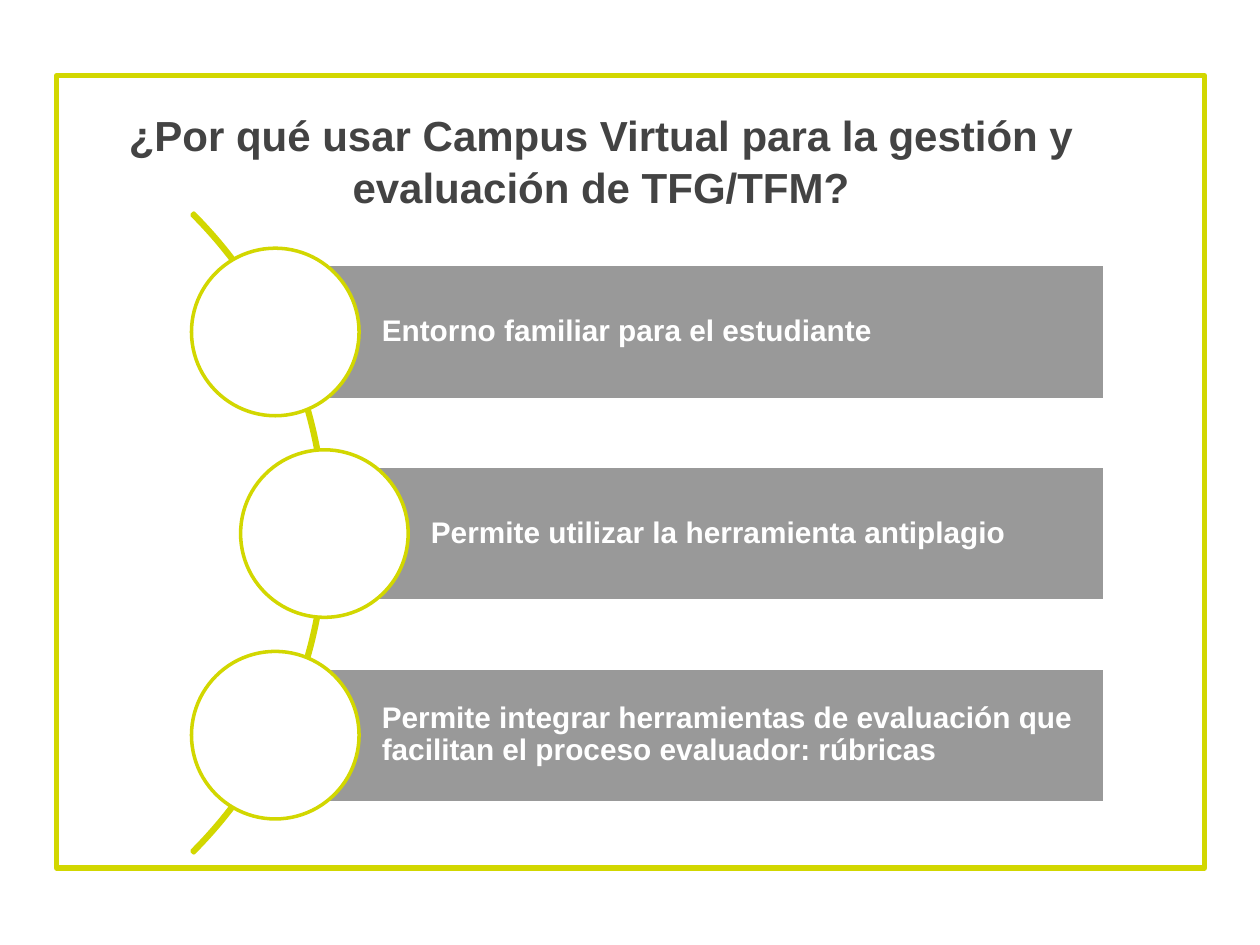
from dataclasses import dataclass

import pptx
import pptx.util
from pptx.dml.color import RGBColor
from pptx.enum.shapes import MSO_SHAPE
from pptx.enum.text import MSO_ANCHOR, MSO_AUTO_SIZE, PP_ALIGN

PX = 9144  # EMU per px, 100 px to the inch


@dataclass(frozen=True)
class Theme:
    font: str = "Arial"
    accent: str = "D2D700"
    bar: str = "999999"
    paper: str = "FFFFFF"
    title: str = "434343"
    title_size: int = 24
    bar_size: int = 17
    frame_line: int = 3
    line: int = 2


THEME = Theme()
TITLE = "¿Por qué usar Campus Virtual para la gestión y evaluación de TFG/TFM?"
REASONS = [
    "Entorno familiar para el estudiante",
    "Permite utilizar la herramienta antiplagio",
    "Permite integrar herramientas de evaluación que "
    "facilitan el proceso evaluador: rúbricas",
]


def emu(*lengths):
    return [pptx.util.Emu(n * PX) for n in lengths]


def add_outlined(slide, kind, box, line, width=THEME.line, fill=None):
    sp = slide.shapes.add_shape(kind, *emu(*box))
    sp.shadow.inherit = False
    if fill:
        sp.fill.solid()
        sp.fill.fore_color.rgb = RGBColor.from_string(fill)
    else:
        sp.fill.background()
    sp.line.color.rgb = RGBColor.from_string(line)
    sp.line.width = pptx.util.Pt(width)
    return sp


def set_text(sp, text, size, color, align, anchor, spacing, insets):
    tf = sp.text_frame
    tf.text = text
    tf.word_wrap = True
    tf.auto_size = MSO_AUTO_SIZE.NONE
    tf.vertical_anchor = anchor
    tf.margin_left, tf.margin_top, tf.margin_right, tf.margin_bottom = emu(*insets)
    p = tf.paragraphs[0]
    p.alignment = align
    p.line_spacing = spacing
    p.font.name = THEME.font
    p.font.size = pptx.util.Pt(size)
    p.font.bold = True
    p.font.color.rgb = RGBColor.from_string(color)


def place_title(slide, box):
    sp = slide.shapes.title
    sp.left, sp.top, sp.width, sp.height = emu(*box)
    set_text(sp, TITLE, THEME.title_size, THEME.title, PP_ALIGN.CENTER,
             MSO_ANCHOR.TOP, 1.04, (10, 10, 10, 10))


def add_reason(slide, box, text):
    """A bar filling the box, with a circle centred on its left edge."""
    left, top, width, height = box
    bar = add_outlined(slide, MSO_SHAPE.RECTANGLE, box, THEME.paper, fill=THEME.bar)
    set_text(bar, text, THEME.bar_size, THEME.paper, PP_ALIGN.LEFT,
             MSO_ANCHOR.MIDDLE, 0.9, (85, 5, 5, 5))
    size = height * 5 // 4
    circle = (left - size // 2, top - (size - height) // 2, size, size)
    add_outlined(slide, MSO_SHAPE.OVAL, circle, THEME.accent, fill=THEME.paper)


def add_curved_list(slide, box, reasons):
    """Bars spaced evenly down the box, strung on an arc bulging to the right."""
    left, top, width, height = box
    diameter, bulge, bar_height, indent = 718, 41, 107, 39
    arc_box = (left + bulge - diameter, top + (height - diameter) // 2,
               diameter, diameter)
    arc = add_outlined(slide, MSO_SHAPE.BLOCK_ARC, arc_box, THEME.accent,
                       fill=THEME.accent)
    for i, value in enumerate((189, 27, 0.003)):  # from 315° to 45°, hairline
        arc.adjustments[i] = value

    step = (height - bar_height) // (len(reasons) - 1)
    for i, text in enumerate(reasons):
        shift = indent * (i % 2)
        add_reason(slide, (left + shift, top + i * step, width - shift, bar_height),
                   text)


def main():
    prs = pptx.Presentation()
    prs.slide_width, prs.slide_height = emu(1000, 750)
    slide = prs.slides.add_slide(prs.slide_layouts[5])
    add_outlined(slide, MSO_SHAPE.RECTANGLE, (45, 60, 911, 629), THEME.accent,
                 THEME.frame_line)
    place_title(slide, (69, 75, 816, 70))
    add_curved_list(slide, (218, 210, 659, 427), REASONS)
    prs.save("out.pptx")


if __name__ == "__main__":
    main()
